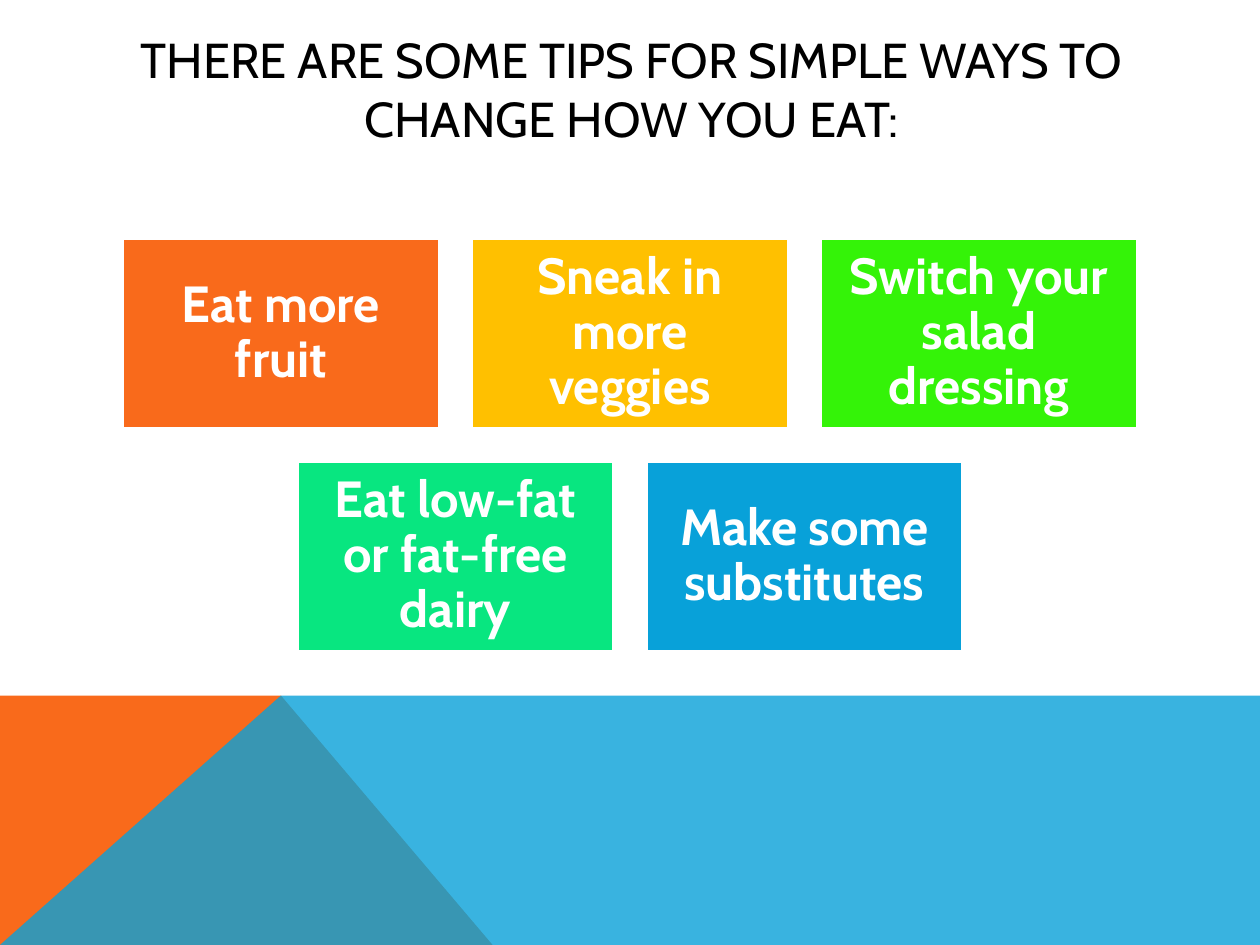
from lxml.etree import SubElement
from pptx import Presentation
from pptx.dml.color import RGBColor
from pptx.enum.shapes import MSO_SHAPE
from pptx.enum.text import MSO_ANCHOR, PP_ALIGN
from pptx.oxml.ns import qn
from pptx.util import Inches, Pt

WHITE = RGBColor(0xFF, 0xFF, 0xFF)
BLACK = RGBColor(0x00, 0x00, 0x00)
ORANGE = RGBColor(0xF9, 0x6A, 0x1B)
GOLD = RGBColor(0xFF, 0xC0, 0x00)
LIME = RGBColor(0x34, 0xF3, 0x08)
MINT = RGBColor(0x08, 0xE6, 0x80)
BLUE = RGBColor(0x08, 0xA1, 0xD9)

WIDE, HIGH = 10, 7.5
TILE_W, TILE_H, GAP = 2.52, 1.51, 0.25
TOP, STEP = 1.89, 1.77
ROWS = [
    [("Eat more fruit", ORANGE), ("Sneak in more veggies", GOLD),
     ("Switch your salad dressing", LIME)],
    [("Eat low-fat or fat-free dairy", MINT), ("Make some substitutes", BLUE)],
]


class Deck:
    """Holds the slide and its style, and draws each kind of element."""

    font = "Cabin"

    def __init__(self, slide):
        self.slide = slide

    def label(self, frame, text, size, color, bold=False, pad=0.1, space=1.0):
        frame.text = text
        frame.word_wrap = True
        frame.vertical_anchor = MSO_ANCHOR.MIDDLE
        frame.margin_left = frame.margin_right = Inches(pad)
        frame.margin_top = frame.margin_bottom = Inches(pad)
        para = frame.paragraphs[0]
        para.alignment = PP_ALIGN.CENTER
        para.line_spacing = space
        font = para.runs[0].font
        font.name, font.size, font.bold = self.font, Pt(size), bold
        font.color.rgb = color

    def title(self, text, x, y, w, h):
        box = self.slide.shapes.add_textbox(
            Inches(x), Inches(y), Inches(w), Inches(h))
        self.label(box.text_frame, text, 28, BLACK, pad=0.05)

    def tile(self, text, color, x, y):
        tile = self.slide.shapes.add_shape(
            MSO_SHAPE.RECTANGLE, Inches(x), Inches(y),
            Inches(TILE_W), Inches(TILE_H))
        tile.shadow.inherit = False
        tile.fill.solid()
        tile.fill.fore_color.rgb = color
        tile.line.color.rgb = WHITE
        tile.line.width = Pt(2)
        self.label(tile.text_frame, text, 29, WHITE, True, 0.12, 0.9)

    def area(self, points, color, alpha=100):
        spots = [(Inches(x), Inches(y)) for x, y in points]
        pen = self.slide.shapes.build_freeform(*spots[0])
        pen.add_line_segments(spots[1:], close=True)
        area = pen.convert_to_shape()
        area.shadow.inherit = False
        area.fill.solid()
        area.fill.fore_color.rgb = color
        area.line.fill.background()
        if alpha < 100:
            tone = area.element.spPr.find(qn("a:solidFill"))[0]
            SubElement(tone, qn("a:alpha"), val=str(alpha * 1000))


def main():
    show = Presentation()
    show.slide_width, show.slide_height = Inches(WIDE), Inches(HIGH)
    deck = Deck(show.slides.add_slide(show.slide_layouts[6]))
    edge, peak = 5.52, 2.23
    deck.area([(0, HIGH), (0, edge), (peak, edge), (3.91, HIGH)], ORANGE)
    deck.area([(0, HIGH), (peak, edge), (WIDE, edge), (WIDE, HIGH)], BLUE, 80)
    deck.title("THERE ARE SOME TIPS FOR SIMPLE WAYS TO CHANGE HOW YOU EAT:",
               0.9, 0.4, 8.22, 0.6)
    for row, tiles in enumerate(ROWS):
        span = len(tiles) * (TILE_W + GAP) - GAP
        left = (WIDE - span) / 2
        for col, (text, color) in enumerate(tiles):
            deck.tile(text, color, left + col * (TILE_W + GAP), TOP + row * STEP)
    show.save("out.pptx")


if __name__ == "__main__":
    main()
